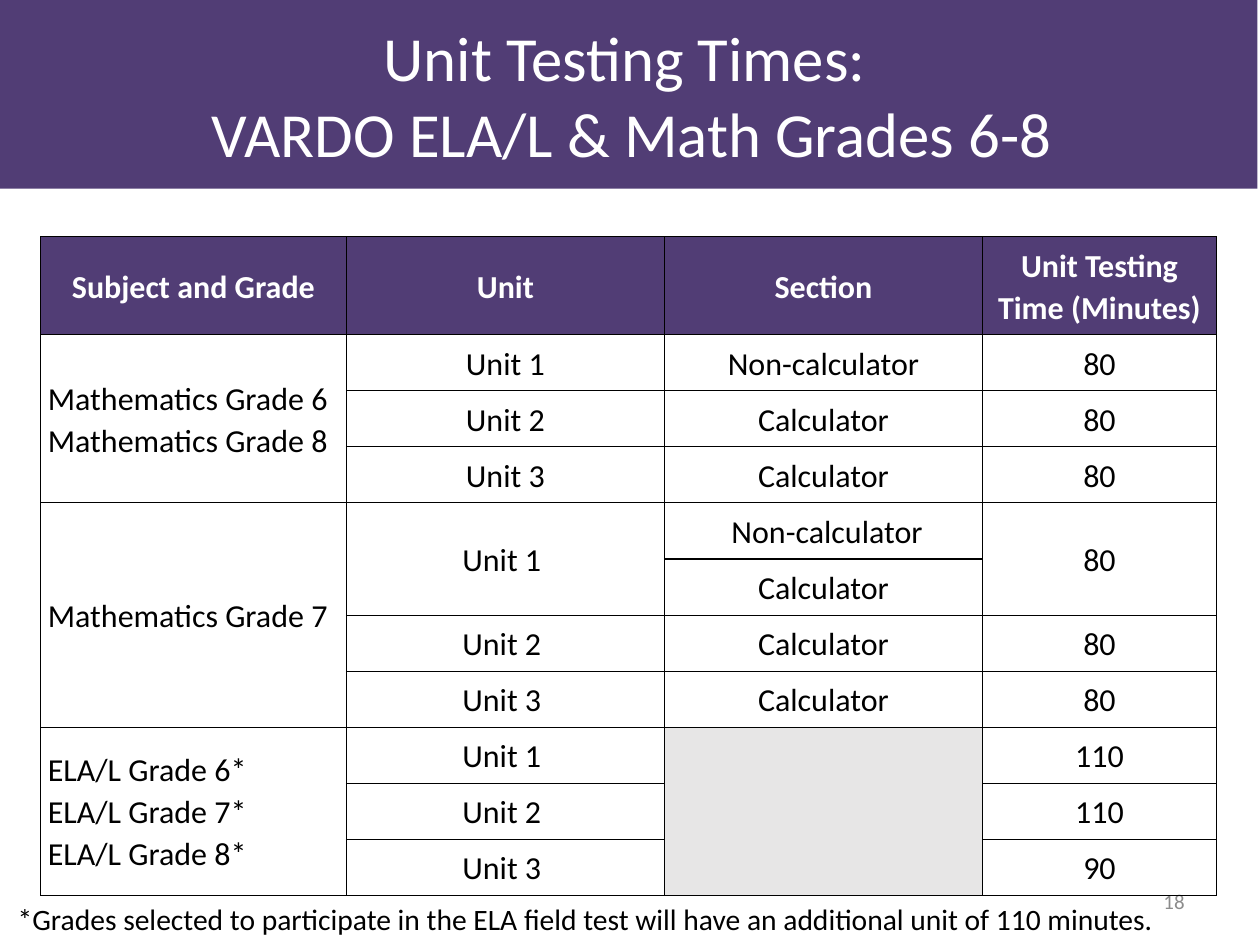
from dataclasses import dataclass

from lxml.etree import SubElement
from pptx import Presentation
from pptx.dml.color import RGBColor
from pptx.enum.shapes import MSO_SHAPE
from pptx.enum.text import MSO_ANCHOR as Anchor, MSO_AUTO_SIZE as AutoSize, PP_ALIGN as Align
from pptx.oxml.ns import qn
from pptx.util import Inches, Pt

FONT = "Calibri"
COLORS = {"purple": "513D75", "white": "FFFFFF", "black": "000000",
          "gray": "8C8C8C", "shade": "E7E6E6"}
COL_WIDTHS = [3.45, 3.59, 3.59, 2.64]
HEADER_HEIGHT, ROW_HEIGHT, ROW_COUNT = 1.09, 0.62, 11
CELL_MARGIN = 0.08
BOX_MARGINS = (0.14, 0.07)


@dataclass
class Entry:
    row: int
    col: int
    text: str
    span: int = 1
    fill: str | None = None


HEADERS = ["Subject and Grade", "Unit", "Section", "Unit Testing Time (Minutes)"]
SUBJECTS = [
    Entry(1, 0, "Mathematics Grade 6\nMathematics Grade 8", 3),
    Entry(4, 0, "Mathematics Grade 7", 4),
    Entry(8, 0, "ELA/L Grade 6*\vELA/L Grade 7*\nELA/L Grade 8*", 3),
]
UNITS = [
    Entry(1, 1, "Unit 1"), Entry(2, 1, "Unit 2"), Entry(3, 1, "Unit 3"),
    Entry(4, 1, "Unit 1 ", 2), Entry(6, 1, "Unit 2 "), Entry(7, 1, "Unit 3 "),
    Entry(8, 1, "Unit 1 "), Entry(9, 1, "Unit 2 "), Entry(10, 1, "Unit 3 "),
]
SECTIONS = [
    Entry(1, 2, "Non-calculator"), Entry(4, 2, " Non-calculator"),
    *[Entry(row, 2, "Calculator") for row in (2, 3, 5, 6, 7)],
    Entry(8, 2, "", 3, "shade"),
]
TIMES = [
    *[Entry(row, 3, "80") for row in (1, 2, 3, 6, 7)],
    Entry(4, 3, "80", 2),
    Entry(8, 3, "110"), Entry(9, 3, "110"), Entry(10, 3, "90"),
]


def rgb(name: str) -> RGBColor:
    return RGBColor.from_string(COLORS[name])


def write(tf, text: str, size: float, color: str, align=Align.LEFT,
          bold: bool = False, spacing: float | None = None) -> None:
    """Fill a text frame; a newline starts a paragraph, a vertical tab a line."""
    for i, para in enumerate(text.split("\n")):
        p = tf.add_paragraph() if i else tf.paragraphs[0]
        p.alignment = align
        if spacing:
            p.line_spacing = spacing
        for j, line in enumerate(para.split("\v")):
            if j:
                p.add_line_break()
            r = p.add_run()
            r.text = line
            r.font.name, r.font.size, r.font.bold = FONT, Pt(size), bold
            r.font.color.rgb = rgb(color)


def place(sp, left: float, top: float, width: float, height: float) -> None:
    sp.left, sp.top = Inches(left), Inches(top)
    sp.width, sp.height = Inches(width), Inches(height)


def set_frame(tf, anchor, auto_size=AutoSize.NONE) -> None:
    tf.word_wrap = True
    tf.auto_size = auto_size
    tf.vertical_anchor = anchor
    tf.margin_left = tf.margin_right = Inches(BOX_MARGINS[0])
    tf.margin_top = tf.margin_bottom = Inches(BOX_MARGINS[1])


def add_borders(cell) -> None:
    tc_pr = cell._tc.get_or_add_tcPr()
    for side in ("a:lnL", "a:lnR", "a:lnT", "a:lnB"):
        ln = SubElement(tc_pr, qn(side), w=str(Pt(1)))
        fill = SubElement(ln, qn("a:solidFill"))
        SubElement(fill, qn("a:srgbClr"), val=COLORS["black"])


def fill_cell(table, entry: Entry) -> None:
    cell = table.cell(entry.row, entry.col)
    if entry.span > 1:
        cell.merge(table.cell(entry.row + entry.span - 1, entry.col))
    if entry.fill:
        cell.fill.solid()
        cell.fill.fore_color.rgb = rgb(entry.fill)
    if entry.text:
        header = entry.row == 0
        align = Align.CENTER if header or entry.col else Align.LEFT
        write(cell.text_frame, entry.text, 26, "white" if header else "black",
              align, header, 1.07)


def add_times_table(slide) -> None:
    height = HEADER_HEIGHT + ROW_HEIGHT * (ROW_COUNT - 1)
    table = slide.shapes.add_table(
        ROW_COUNT, len(COL_WIDTHS), Inches(0.46), Inches(2.67),
        Inches(sum(COL_WIDTHS)), Inches(height)).table
    table.first_row = table.horz_banding = False
    for col, width in zip(table.columns, COL_WIDTHS):
        col.width = Inches(width)
    for i, row in enumerate(table.rows):
        row.height = Inches(ROW_HEIGHT if i else HEADER_HEIGHT)
    for cell in table.iter_cells():
        add_borders(cell)
        cell.fill.background()
        cell.vertical_anchor = Anchor.MIDDLE
        cell.margin_left = cell.margin_right = Inches(CELL_MARGIN)
        cell.margin_top = cell.margin_bottom = Inches(CELL_MARGIN)
    headers = [Entry(0, col, text, fill="purple") for col, text in enumerate(HEADERS)]
    for entry in headers + SUBJECTS + UNITS + SECTIONS + TIMES:
        fill_cell(table, entry)


def add_title(slide) -> None:
    band = slide.shapes.add_shape(MSO_SHAPE.RECTANGLE, 0, 0, Inches(14.19), Inches(2.13))
    band.shadow.inherit = False
    band.fill.solid()
    band.fill.fore_color.rgb = rgb("purple")
    band.line.fill.background()
    title = slide.shapes.title
    title.element.addprevious(band.element)
    place(title, 0.02, 0, 14.22, 2.13)
    set_frame(title.text_frame, Anchor.MIDDLE)
    write(title.text_frame, "Unit Testing Times: \vVARDO ELA/L & Math Grades 6-8",
          51, "white", Align.CENTER)


def add_text(slide, box: tuple, text: str, size: float, color: str,
             align=Align.LEFT, anchor=Anchor.TOP, auto_size=AutoSize.NONE) -> None:
    sp = slide.shapes.add_textbox(*[Inches(v) for v in box])
    set_frame(sp.text_frame, anchor, auto_size)
    write(sp.text_frame, text, size, color, align)


def main() -> None:
    prs = Presentation()
    prs.slide_width, prs.slide_height = Inches(14.22), Inches(10.66)
    slide = prs.slides.add_slide(prs.slide_layouts.get_by_name("Title Only"))
    add_title(slide)
    add_text(slide, (10.19, 9.88, 3.32, 0.57), "18", 17, "gray", Align.RIGHT, Anchor.MIDDLE)
    add_times_table(slide)
    add_text(slide, (0.06, 10.09, 14.07, 0.55),
             "*Grades selected to participate in the ELA field test will have "
             "an additional unit of 110 minutes.",
             24, "black", auto_size=AutoSize.SHAPE_TO_FIT_TEXT)
    prs.save("out.pptx")


if __name__ == "__main__":
    main()
